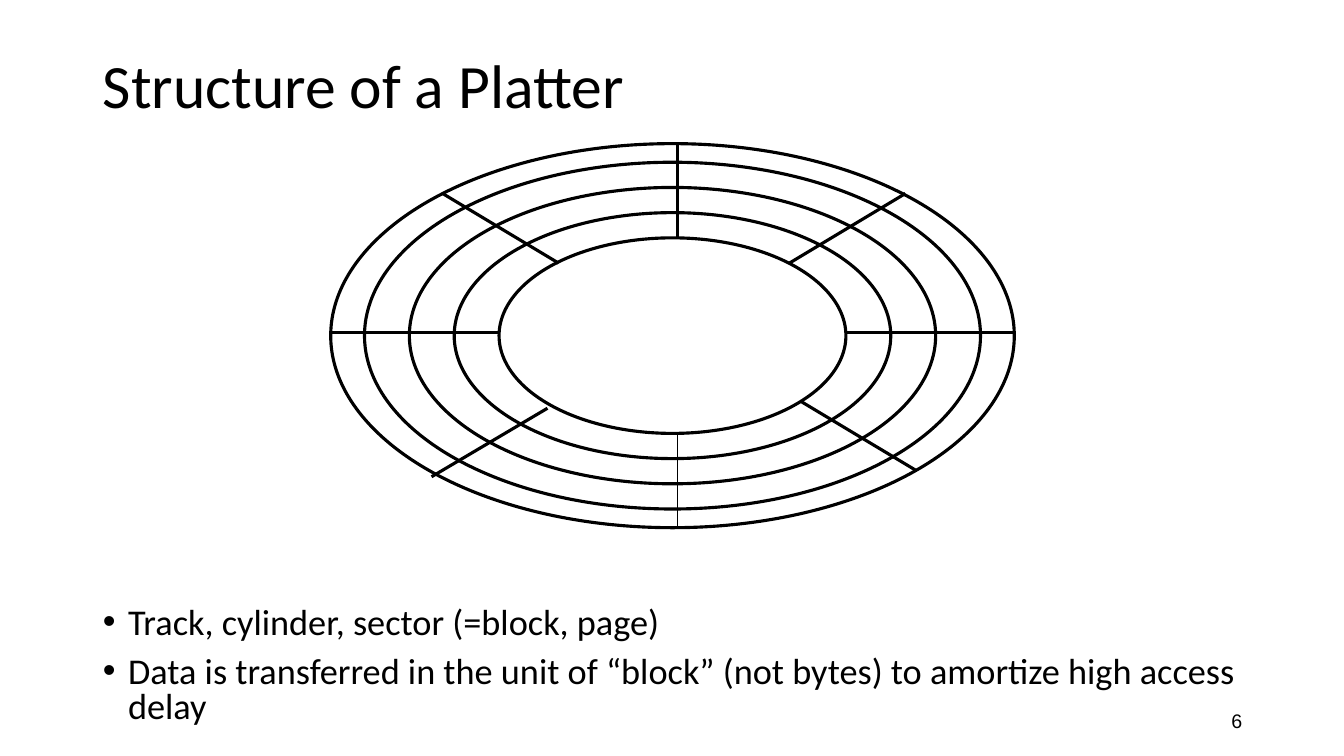
"""Build a slide showing the tracks and sectors of a disk platter."""
from lxml.etree import SubElement
from pptx import Presentation
from pptx.dml.color import RGBColor
from pptx.enum.shapes import MSO_CONNECTOR, MSO_SHAPE
from pptx.enum.text import MSO_ANCHOR, MSO_AUTO_SIZE, PP_ALIGN
from pptx.oxml.ns import qn
from pptx.util import Inches, Pt


def color(hex_string):
    return RGBColor.from_string(hex_string)


def style(paragraph, size, font_name):
    paragraph.font.size = Pt(size)
    paragraph.font.name = font_name
    paragraph.font.color.rgb = color("000000")


presentation = Presentation()
presentation.slide_width = Inches(13.33)
presentation.slide_height = Inches(7.5)
slide = presentation.slides.add_slide(presentation.slide_layouts[1])

title = slide.shapes.title
title.left, title.top = Inches(0.92), Inches(0.33)
title.width, title.height = Inches(11.5), Inches(1.09)
title.text_frame.text = "Structure of a Platter"
title.text_frame.vertical_anchor = MSO_ANCHOR.MIDDLE
heading = title.text_frame.paragraphs[0]
heading.alignment = PP_ALIGN.LEFT
heading.line_spacing = 0.9
style(heading, 44, "Calibri")

notions = slide.placeholders[1]
notions.left, notions.top = Inches(0.92), Inches(5.98)
notions.width, notions.height = Inches(11.5), Inches(1.3)
notions.text_frame.auto_size = MSO_AUTO_SIZE.NONE
notions.text_frame.text = (
    "Track, cylinder, sector (=block, page)\n"
    "Data is transferred in the unit of “block” (not bytes) to amortize high access delay"
)
for notion, gap in zip(notions.text_frame.paragraphs, (0, 10)):
    notion.line_spacing = 0.8
    notion.space_before = Pt(gap)
    style(notion, 25.9, "Calibri")
    properties = notion._p.get_or_add_pPr()
    properties.set("marL", str(Inches(0.25)))
    properties.set("indent", str(-Inches(0.25)))

page_number = slide.shapes.add_textbox(Inches(9.42), Inches(6.95), Inches(3), Inches(0.4))
page_number.text_frame.word_wrap = True
page_number.text_frame.vertical_anchor = MSO_ANCHOR.MIDDLE
page_number.text_frame.text = "6"
page_number.text_frame.paragraphs[0].alignment = PP_ALIGN.RIGHT
style(page_number.text_frame.paragraphs[0], 14, "Arial")

center_x, center_y = 6.67, 3.33
platter = slide.shapes.add_group_shape()
for width, height in [(6.78, 3.81), (6.11, 3.44), (5.22, 2.94), (4.33, 2.44), (3.44, 1.94)]:
    track = platter.shapes.add_shape(
        MSO_SHAPE.OVAL, Inches(center_x - width / 2), Inches(center_y - height / 2),
        Inches(width), Inches(height))
    track.shadow.inherit = False
    track.fill.solid()
    track.fill.fore_color.rgb = color("FFFFFF")
    track.line.color.rgb = color("000000")
    track.line.width = Pt(2.25)

sector_borders = [
    (6.72, 5.23, 6.72, 4.3, 0.75),
    (6.72, 2.36, 6.72, 1.42, 2.25),
    (10.06, 3.3, 8.39, 3.3, 2.25),
    (4.94, 3.3, 3.28, 3.3, 2.25),
    (8.98, 1.92, 7.83, 2.61, 2.25),
    (5.43, 4.05, 4.28, 4.73, 2.25),
    (7.94, 3.98, 9.09, 4.67, 2.25),
    (4.39, 1.92, 5.54, 2.61, 2.25),
]
for *ends, weight in sector_borders:
    border = platter.shapes.add_connector(MSO_CONNECTOR.STRAIGHT, *map(Inches, ends))
    border.line.color.rgb = color("000000")
    border.line.width = Pt(weight)
    SubElement(border._element.spPr, qn("a:effectLst"))

presentation.save("out.pptx")
